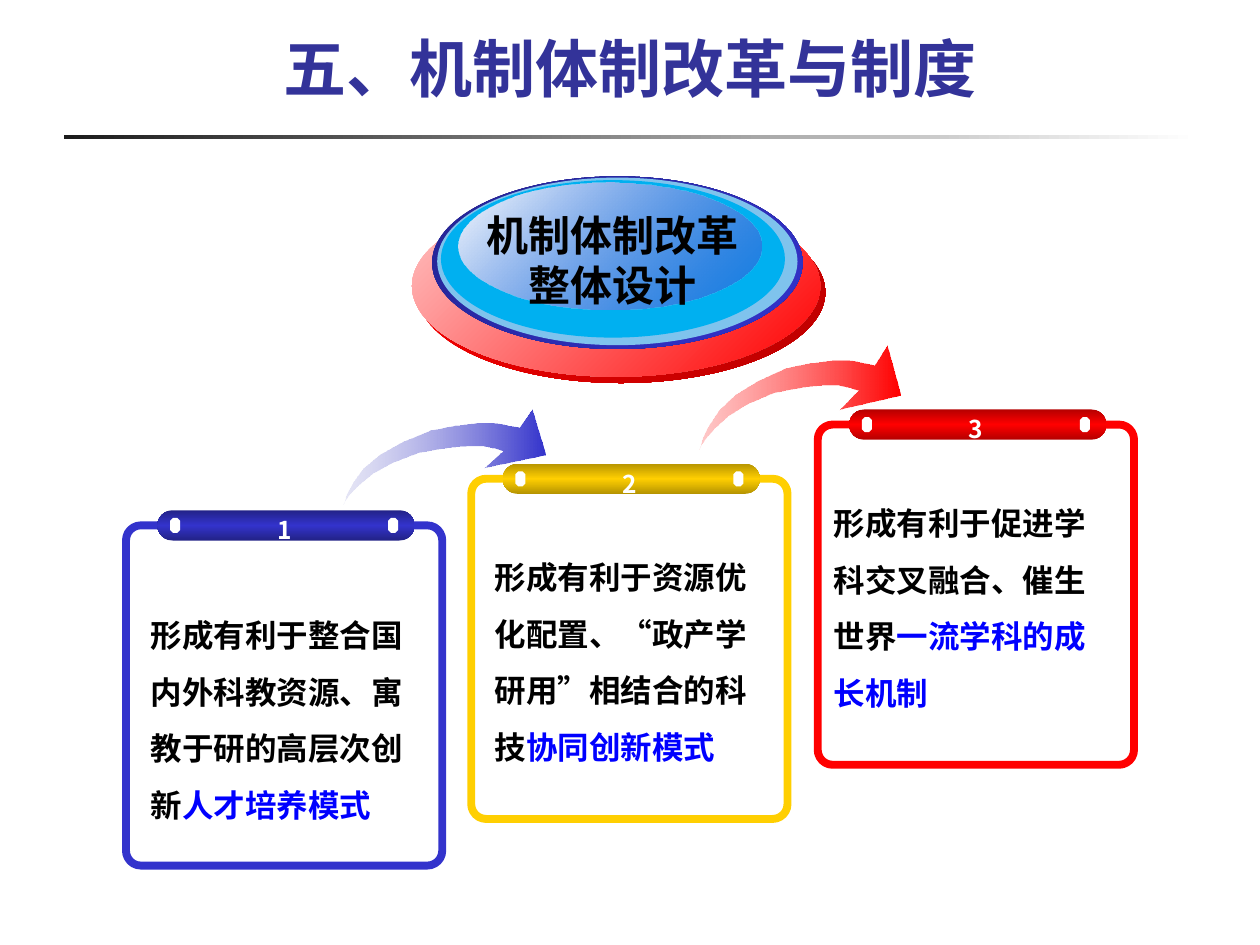
from lxml.etree import SubElement
from pptx import Presentation
from pptx.dml.color import RGBColor
from pptx.enum.shapes import MSO_SHAPE
from pptx.enum.text import MSO_ANCHOR, PP_ALIGN
from pptx.oxml.ns import qn
from pptx.util import Inches, Pt

FONT = "Noto Sans CJK SC"
BLUE, YELLOW, RED = "3333CC", "FFCF01", "FF0000"
ARROW_WIDTH, ARROW_HEIGHT = 160, 83
ARROW_OUTLINE = [
    (0, 83), (1, 80), (5, 74), (12, 66), (23, 56), (38, 47), (59, 38),
    (80, 34), (97, 32), (111, 32), (120, 34), (126, 36), (111, 51),
    (160, 40), (149, 0), (139, 16), (130, 14), (119, 12), (105, 12),
    (88, 14), (69, 18), (47, 28), (29, 39), (16, 51), (8, 63), (3, 73),
    (1, 80),
]


def color(value):
    return RGBColor.from_string(value)


def fill_gradient(shape, stops, angle):
    shape.fill.solid()
    solid = shape._element.spPr.find(qn("a:solidFill"))
    gradient = solid.makeelement(qn("a:gradFill"), {"rotWithShape": "1"})
    stop_list = SubElement(gradient, qn("a:gsLst"))
    for index, (value, opacity) in enumerate(stops):
        position = 100000 * index // (len(stops) - 1)
        stop = SubElement(stop_list, qn("a:gs"), pos=str(position))
        stop_color = SubElement(stop, qn("a:srgbClr"), val=value)
        if opacity < 100:
            SubElement(stop_color, qn("a:alpha"), val=str(opacity * 1000))
    SubElement(gradient, qn("a:lin"), ang=str(angle * 60000), scaled="0")
    solid.getparent().replace(solid, gradient)


def paint(shape, fill, angle=0):
    shape.shadow.inherit = False
    shape.line.fill.background()
    if isinstance(fill, str):
        shape.fill.solid()
        shape.fill.fore_color.rgb = color(fill)
    else:
        fill_gradient(shape, fill, angle)


def add_filled(slide, kind, left, top, width, height, fill, angle=0):
    shape = slide.shapes.add_shape(
        kind, Inches(left), Inches(top), Inches(width), Inches(height))
    paint(shape, fill, angle)
    return shape


def add_text(slide, left, top, width, height, paragraphs, size,
             align=PP_ALIGN.CENTER, spacing=None, wrap=False,
             anchor=MSO_ANCHOR.TOP):
    box = slide.shapes.add_textbox(
        Inches(left), Inches(top), Inches(width), Inches(height))
    frame = box.text_frame
    frame.word_wrap = wrap
    frame.vertical_anchor = anchor
    for index, runs in enumerate(paragraphs):
        paragraph = frame.paragraphs[0] if index == 0 else frame.add_paragraph()
        paragraph.alignment = align
        paragraph.line_spacing = spacing
        font = paragraph.font
        font.size = Pt(size)
        font.bold = True
        if len(runs) == 1:
            font.color.rgb = color(runs[0][1])
        font.name = FONT
        SubElement(font._element, qn("a:ea"), typeface=FONT)
        for text, value in runs:
            run = paragraph.add_run()
            run.text = text
            if len(runs) > 1:
                run.font.color.rgb = color(value)


def add_arrow(slide, left, top, height, pale, strong):
    scale = (Inches(0.01), Inches(height) / ARROW_HEIGHT)
    builder = slide.shapes.build_freeform(*ARROW_OUTLINE[0], scale=scale)
    builder.add_line_segments(ARROW_OUTLINE[1:], close=True)
    arrow = builder.convert_to_shape(Inches(left), Inches(top))
    paint(arrow, [(pale, 32), (strong, 100)])


def add_card(slide, left, top, number, accent, dark, body, body_at):
    frame = slide.shapes.add_shape(
        MSO_SHAPE.ROUNDED_RECTANGLE,
        Inches(left), Inches(top), Inches(2.51), Inches(2.7))
    frame.adjustments[0] = 0.047
    frame.shadow.inherit = False
    frame.fill.background()
    frame.line.color.rgb = color(accent)
    frame.line.width = Pt(4.5)
    bar = add_filled(
        slide, MSO_SHAPE.ROUNDED_RECTANGLE, left + 0.25, top - 0.12, 2.04, 0.24,
        [(dark, 100), (accent, 100), (dark, 100)], 90)
    bar.adjustments[0] = 0.5
    for offset in (0.35, 2.08):
        add_filled(slide, MSO_SHAPE.OCTAGON, left + offset, top - 0.06,
                   0.08, 0.12, "FFFFFF")
    add_text(slide, left + 1.1, top - 0.13, 0.31, 0.31,
             [[(number, "FFFFFF")]], 14)
    plain, highlight = body
    add_text(slide, *body_at, 2.33, 1.85,
             [[(plain, "000000"), (highlight, "0000FF")]], 18,
             align=PP_ALIGN.LEFT, spacing=1.5, wrap=True)


def add_emblem(slide):
    ellipses = [
        (3.31, 1.6, 3.24, 1.44, [("FF0000", 100), ("BA0000", 100)]),
        (3.27, 1.55, 3.24, 1.44, [("FFC6C6", 100), ("FF0000", 100)]),
        (3.43, 1.4, 2.94, 1.37, [("242492", 100), (BLUE, 100)]),
        (3.47, 1.41, 2.86, 1.33, "7FC3ED"),
        (3.5, 1.43, 2.73, 1.25, "00B0F0"),
        (3.64, 1.45, 2.4, 1.01, [("FFFFFF", 100), (BLUE, 38)]),
    ]
    for left, top, width, height, fill in ellipses:
        add_filled(slide, MSO_SHAPE.OVAL, left, top, width, height, fill, 45)
    add_text(slide, 3.75, 1.61, 2.22, 0.87,
             [[("机制体制改革", "000000")], [("整体设计", "000000")]], 24)


def main():
    presentation = Presentation()
    presentation.slide_width = Inches(10)
    presentation.slide_height = Inches(7.5)
    slide = presentation.slides.add_slide(presentation.slide_layouts[6])

    add_filled(slide, MSO_SHAPE.RECTANGLE, 0.51, 1.07, 9, 0.03,
               [("1C1C1C", 100), ("FFFFFF", 100)])
    add_text(slide, 0, 0.23, 10, 0.65, [[("五、机制体制改革与制度", "333399")]], 36,
             wrap=True, anchor=MSO_ANCHOR.BOTTOM)
    add_arrow(slide, 5.55, 2.74, 0.83, "FF5A5A", RED)
    add_arrow(slide, 2.73, 3.25, 0.75, "B2B2E3", BLUE)
    cards = [
        (1, 4.17, "1", BLUE, "222287",
         ("形成有利于整合国内外科教资源、寓教于研的高层次创新", "人才培养模式"),
         (1.1, 4.69)),
        (3.74, 3.8, "2", YELLOW, "B69401",
         ("形成有利于资源优化配置、“政产学研用”相结合的科技", "协同创新模式"),
         (3.83, 4.23)),
        (6.49, 3.37, "3", RED, "B60000",
         ("形成有利于促进学科交叉融合、催生世界", "一流学科的成长机制"),
         (6.52, 3.8)),
    ]
    for card in cards:
        add_card(slide, *card)
    add_emblem(slide)
    presentation.save("out.pptx")


if __name__ == "__main__":
    main()
